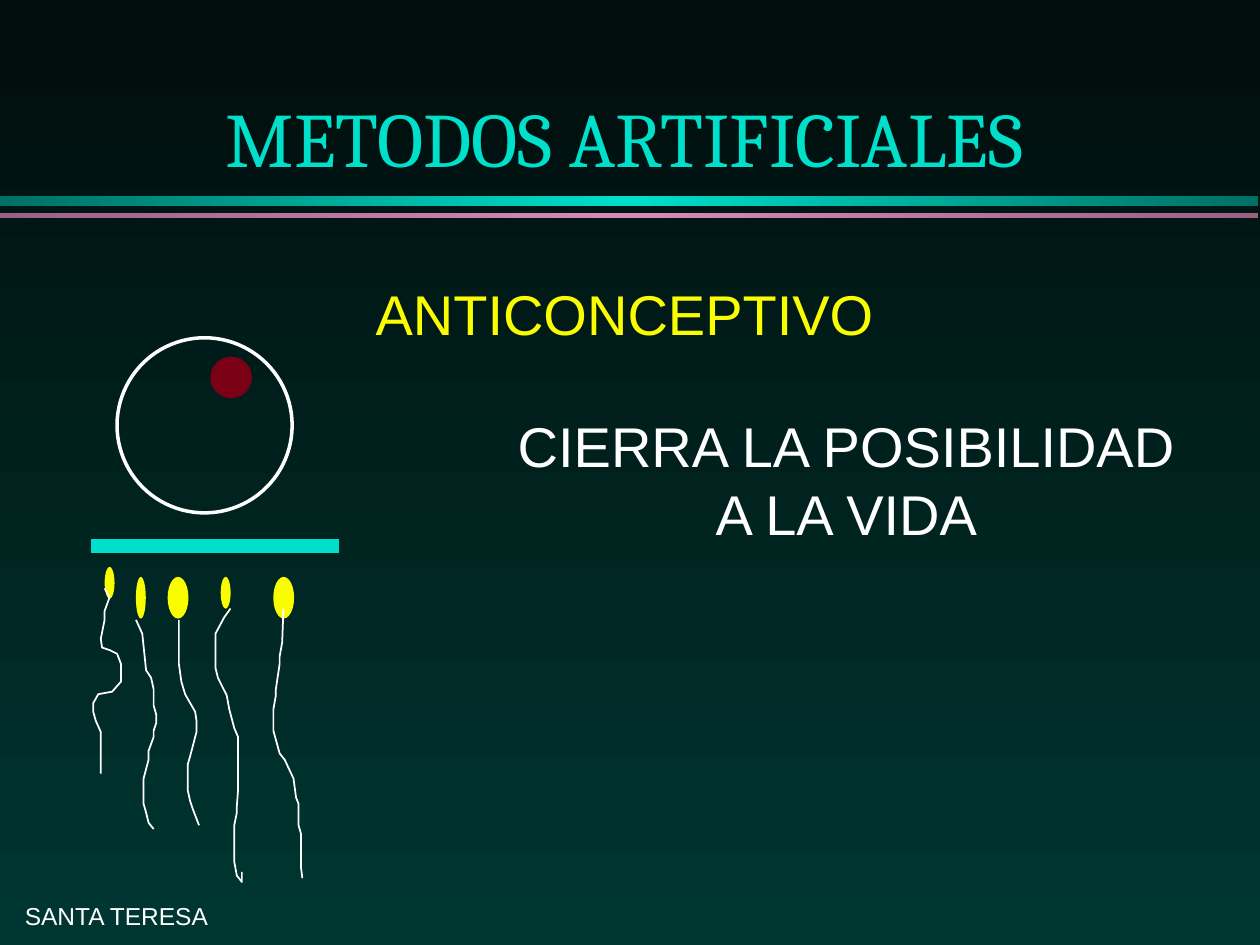
from copy import deepcopy

from lxml.etree import SubElement
from pptx import Presentation
from pptx.dml.color import RGBColor
from pptx.enum.shapes import MSO_CONNECTOR, MSO_SHAPE
from pptx.enum.text import MSO_ANCHOR, MSO_AUTO_SIZE, PP_ALIGN
from pptx.oxml.ns import qn
from pptx.util import Cm, Pt

COLORS = {
    "night": "000D0C",
    "deep": "003631",
    "teal": "00DFCA",
    "dark teal": "007065",
    "pink": "D989B8",
    "dark pink": "9A6183",
    "white": "FFFFFF",
    "yellow": "FAFD00",
    "red": "790015",
}


def color(name):
    return RGBColor.from_string(COLORS[name])


def write(box, lines, font_format, color_name, alignment=PP_ALIGN.CENTER):
    """Put one paragraph per line in the box, all in the same format."""
    frame = box.text_frame
    frame.text = "\n".join(lines)
    for para in frame.paragraphs:
        para.alignment = alignment
        for span in para.runs:
            for name, value in font_format.items():
                setattr(span.font, name, value)
            span.font.color.rgb = color(color_name)


deck = Presentation()
deck.slide_width, deck.slide_height = Cm(25.4), Cm(19.05)
page = deck.slides.add_slide(deck.slide_layouts[1])
shapes = page.shapes

# Background and double rule under the title
backdrop = page.background.fill
backdrop.gradient()
backdrop.gradient_angle = 270
for stop, name in zip(backdrop.gradient_stops, ("night", "deep")):
    stop.color.rgb = color(name)

for top, height, edge, middle in (
    (3.96, 0.2, "dark teal", "teal"),
    (4.29, 0.1, "dark pink", "pink"),
):
    rule = shapes.add_shape(MSO_SHAPE.RECTANGLE, 0, Cm(top), Cm(25.37), Cm(height))
    rule.shadow.inherit = False
    rule.line.fill.background()
    rule.fill.gradient()
    rule.fill.gradient_angle = 0
    stop_list = rule.element.find(".//" + qn("a:gsLst"))
    stop_list.insert(1, deepcopy(stop_list[0]))
    for stop, name, position in zip(
        rule.fill.gradient_stops, (edge, middle, edge), (0, 0.5, 1)
    ):
        stop.color.rgb = color(name)
        stop.position = position

# Texts
title, body = shapes.title, page.placeholders[1]
footer = shapes.add_textbox(Cm(0.25), Cm(18.03), Cm(4.39), Cm(0.84))
message = shapes.add_textbox(Cm(10.13), Cm(8.18), Cm(13.87), Cm(2.95))
for box, top, height, anchor in (
    (title, 0.64, 3.18, MSO_ANCHOR.BOTTOM),
    (body, 5.51, 11.43, MSO_ANCHOR.TOP),
):
    box.left, box.top, box.width, box.height = Cm(1.7), Cm(top), Cm(21.79), Cm(height)
    box.text_frame.vertical_anchor = anchor
    box.text_frame.auto_size = MSO_AUTO_SIZE.NONE
for box in (footer, message):
    box.text_frame.word_wrap = False
    box.text_frame.auto_size = MSO_AUTO_SIZE.SHAPE_TO_FIT_TEXT
footer.text_frame.vertical_anchor = MSO_ANCHOR.MIDDLE

large = {"name": "Arial", "size": Pt(32)}
write(title, ["METODOS ARTIFICIALES"], {"name": "Cambria", "size": Pt(44)}, "teal")
write(body, ["ANTICONCEPTIVO"], large, "yellow")
write(message, ["CIERRA LA POSIBILIDAD", "A LA VIDA"], large, "white")
write(footer, ["SANTA TERESA"], {"name": "Arial", "size": Pt(14)}, "white", PP_ALIGN.LEFT)

body_para = body.text_frame.paragraphs[0]
body_para.space_before = Pt(6.4)
body_format = body_para._p.get_or_add_pPr()
body_format.set("marL", str(Cm(0.95)))
body_format.set("indent", str(-Cm(0.95)))
SubElement(body_format, qn("a:buNone"))

# Egg, its nucleus and the sperm heads
for left, top, width, height, fill_name in (
    (2.36, 6.81, 3.53, 3.53, None),
    (4.24, 7.19, 0.84, 0.84, "red"),
    (2.11, 11.43, 0.2, 0.64, "yellow"),
    (2.74, 11.63, 0.2, 0.84, "yellow"),
    (3.38, 11.63, 0.42, 0.84, "yellow"),
    (4.45, 11.63, 0.2, 0.64, "yellow"),
    (5.51, 11.63, 0.42, 0.84, "yellow"),
):
    cell = shapes.add_shape(MSO_SHAPE.OVAL, Cm(left), Cm(top), Cm(width), Cm(height))
    cell.shadow.inherit = False
    if fill_name:
        cell.fill.solid()
        cell.fill.fore_color.rgb = color(fill_name)
        cell.line.fill.background()
    else:
        cell.fill.background()
        cell.line.color.rgb = color("white")
        cell.line.width = Pt(2)

barrier = shapes.add_connector(MSO_CONNECTOR.STRAIGHT, Cm(1.83), Cm(11), Cm(6.83), Cm(11))
barrier.line.color.rgb = color("teal")
barrier.line.width = Pt(8)
SubElement(barrier.element.spPr, qn("a:effectLst"))

# Sperm tails, with points in hundredths of an inch
tails = (
    [(83, 467), (87, 474), (83, 485), (83, 492), (80, 507), (81, 514), (87, 516),
     (93, 519), (96, 527), (96, 541), (89, 549), (78, 551), (74, 558), (74, 565),
     (76, 572), (80, 581), (80, 614)],
    [(108, 492), (113, 503), (116, 532), (120, 538), (122, 547), (122, 560),
     (124, 567), (124, 574), (122, 580), (122, 585), (118, 596), (118, 603),
     (114, 618), (114, 638), (116, 645), (118, 653), (122, 658)],
    [(142, 492), (142, 527), (144, 541), (147, 551), (155, 565), (156, 572),
     (156, 581), (151, 600), (149, 607), (149, 627), (151, 636), (153, 642),
     (158, 655)],
    [(183, 483), (178, 490), (171, 503), (171, 530), (173, 538), (180, 552),
     (182, 563), (186, 578), (189, 585), (189, 627), (188, 640), (188, 645),
     (186, 655), (186, 684), (188, 695), (192, 700), (192, 692)],
    [(225, 483), (224, 510), (222, 521), (222, 527), (219, 547), (219, 552),
     (217, 563), (217, 580), (222, 598), (226, 603), (233, 618), (235, 633),
     (237, 638), (237, 655), (239, 662), (239, 689), (240, 697)],
)
for start, *points in tails:
    builder = shapes.build_freeform(*start, scale=Cm(0.0254))
    builder.add_line_segments(points, close=False)
    tail = builder.convert_to_shape()
    tail.shadow.inherit = False
    tail.fill.background()
    tail.line.color.rgb = color("white")
    tail.line.width = Pt(1)

deck.save("out.pptx")
